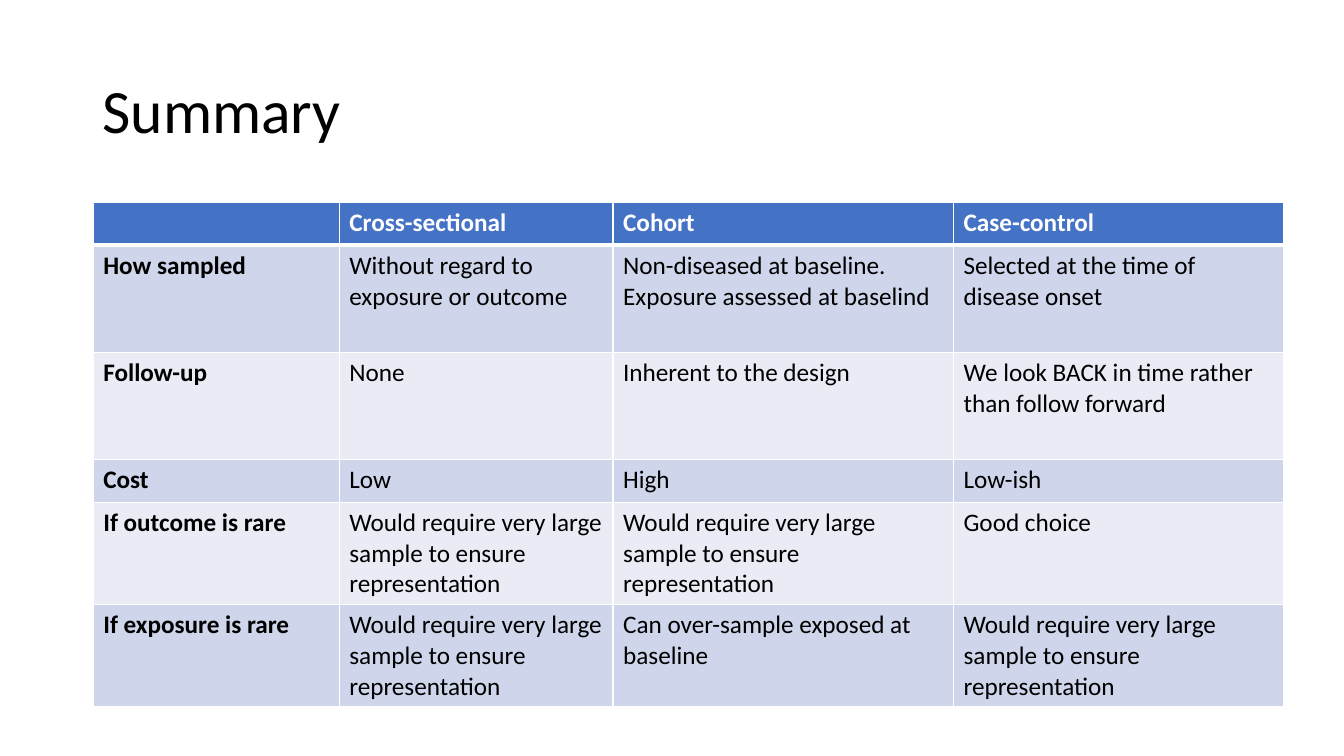
from pptx import Presentation
from pptx.dml.color import RGBColor
from pptx.enum.text import MSO_ANCHOR, PP_ALIGN
from pptx.oxml import parse_xml
from pptx.oxml.ns import nsdecls
from pptx.util import Cm, Pt

FONT = "Calibri"
BLACK = RGBColor(0x00, 0x00, 0x00)
WHITE = RGBColor(0xFF, 0xFF, 0xFF)
HEADER_BLUE = RGBColor(0x44, 0x72, 0xC4)
BAND_DARK = RGBColor(0xCF, 0xD5, 0xEA)
BAND_LIGHT = RGBColor(0xE9, 0xEB, 0xF5)

LARGE_SAMPLE = "Would require very large sample to ensure representation"
STUDY_DESIGNS = [
    ["", "Cross-sectional", "Cohort", "Case-control"],
    ["How sampled", "Without regard to exposure or outcome",
     "Non-diseased at baseline. Exposure assessed at baselind",
     "Selected at the time of disease onset"],
    ["Follow-up", "None", "Inherent to the design",
     "We look BACK in time rather than follow forward"],
    ["Cost", "Low", "High", "Low-ish"],
    ["If outcome is rare", LARGE_SAMPLE, LARGE_SAMPLE, "Good choice"],
    ["If exposure is rare", LARGE_SAMPLE,
     "Can over-sample exposed at baseline", LARGE_SAMPLE],
]
COLUMN_WIDTHS = [6.2, 6.9, 8.58, 8.32]
ROW_HEIGHTS = [1.08, 2.7, 2.7, 1.08, 2.57, 2.57]


def format_text(paragraph, size, color, bold=False):
    for run in paragraph.runs:
        run.font.name = FONT
        run.font.size = Pt(size)
        run.font.bold = bold
        run.font.color.rgb = color


def set_borders(cell, top, bottom):
    properties = cell._tc.get_or_add_tcPr()
    for side, width in (("L", 1), ("R", 1), ("T", top), ("B", bottom)):
        properties.append(parse_xml(
            f'<a:ln{side} {nsdecls("a")} w="{Pt(width)}"><a:solidFill>'
            f'<a:srgbClr val="{WHITE}"/></a:solidFill></a:ln{side}>'))


def add_title(slide, left, top, width, height):
    title = slide.shapes.title
    title.left, title.top, title.width, title.height = left, top, width, height
    text_frame = title.text_frame
    text_frame.text = "Summary"
    text_frame.word_wrap = True
    text_frame.vertical_anchor = MSO_ANCHOR.MIDDLE
    paragraph = text_frame.paragraphs[0]
    paragraph.alignment = PP_ALIGN.LEFT
    paragraph.line_spacing = 0.9
    format_text(paragraph, 44, BLACK)


def fill_cell(cell, text, row, column):
    header = row == 0
    set_borders(cell, 3 if row == 1 else 1, 3 if header else 1)
    cell.fill.solid()
    band = BAND_DARK if row % 2 else BAND_LIGHT
    cell.fill.fore_color.rgb = HEADER_BLUE if header else band
    if text:
        cell.text_frame.text = text
        format_text(cell.text_frame.paragraphs[0], 18,
                    WHITE if header else BLACK, header or column == 0)


def add_design_table(slide, left, top, width, height):
    frame = slide.shapes.add_table(
        len(ROW_HEIGHTS), len(COLUMN_WIDTHS), left, top, width, height)
    table = frame.table
    for column, share in zip(table.columns, COLUMN_WIDTHS):
        column.width = int(width * share / sum(COLUMN_WIDTHS))
    for row, share in zip(table.rows, ROW_HEIGHTS):
        row.height = int(height * share / sum(ROW_HEIGHTS))
    for row, texts in enumerate(STUDY_DESIGNS):
        for column, text in enumerate(texts):
            fill_cell(table.cell(row, column), text, row, column)


def main():
    presentation = Presentation()
    presentation.slide_width = Cm(33.87)
    presentation.slide_height = Cm(19.05)
    slide = presentation.slides.add_slide(presentation.slide_layouts[5])
    add_title(slide, Cm(2.33), Cm(1.01), Cm(29.21), Cm(3.68))
    add_design_table(slide, Cm(2.35), Cm(5.1),
                     Cm(sum(COLUMN_WIDTHS)), Cm(sum(ROW_HEIGHTS)))
    presentation.save("out.pptx")


if __name__ == "__main__":
    main()
